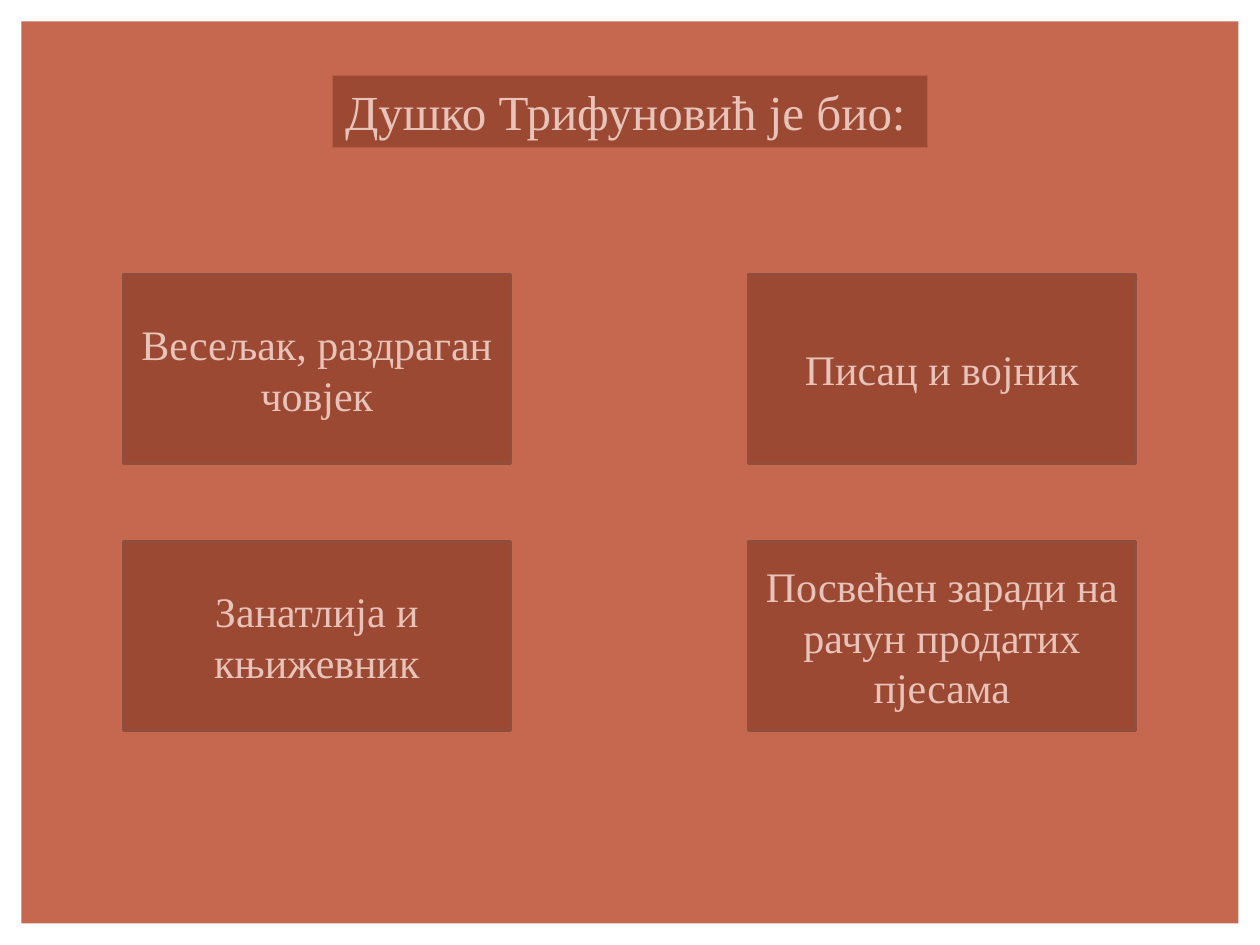
from dataclasses import dataclass

from pptx import Presentation
from pptx.dml.color import RGBColor as Color
from pptx.enum.shapes import MSO_SHAPE as Preset
from pptx.enum.text import MSO_ANCHOR as Anchor, MSO_AUTO_SIZE as AutoSize, PP_ALIGN as Align
from pptx.util import Inches, Pt


@dataclass(frozen=True)
class Theme:
    panel: str = "C5684F"
    box: str = "9C4933"
    border: str = "924E3C"
    text: str = "E8C3B9"
    font: str = "Times New Roman"
    title_size: int = 28
    body_size: int = 24


theme = Theme()

# Slide and grid, in inches
WIDTH, HEIGHT = 10, 7.5
MARGIN = 0.17
TITLE_WIDTH, TITLE_HEIGHT, TITLE_TOP = 4.72, 0.57, 0.6
CARD_WIDTH, CARD_HEIGHT = 3.07, 1.5
GRID_LEFT, GRID_TOP = 0.98, 2.18
COLUMN_STEP, ROW_STEP = 4.96, 2.12


def add_box(text, left, top, width, height, *, fill=theme.box, border=None,
            size=theme.body_size, align=Align.CENTER, anchor=Anchor.MIDDLE):
    shape = slide.shapes.add_shape(
        Preset.RECTANGLE, Inches(left), Inches(top), Inches(width), Inches(height))
    shape.shadow.inherit = False
    shape.fill.solid()
    shape.fill.fore_color.rgb = Color.from_string(fill)
    if border:
        shape.line.color.rgb = Color.from_string(border)
        shape.line.width = Pt(1.5)
    else:
        shape.line.fill.background()
    if text:
        frame = shape.text_frame
        frame.word_wrap = True
        frame.vertical_anchor = anchor
        paragraph = frame.paragraphs[0]
        paragraph.alignment = align
        run = paragraph.add_run()
        run.text = text
        run.font.name = theme.font
        run.font.size = Pt(size)
        run.font.color.rgb = Color.from_string(theme.text)
    return shape


presentation = Presentation()
presentation.slide_width = Inches(WIDTH)
presentation.slide_height = Inches(HEIGHT)
slide = presentation.slides.add_slide(presentation.slide_layouts[6])

# Background panel
add_box("", MARGIN, MARGIN, WIDTH - 2 * MARGIN, HEIGHT - 2 * MARGIN, fill=theme.panel)

# Title
title = add_box("Душко Трифуновић је био:", (WIDTH - TITLE_WIDTH) / 2, TITLE_TOP,
                TITLE_WIDTH, TITLE_HEIGHT, size=theme.title_size,
                align=Align.LEFT, anchor=Anchor.TOP)
title.text_frame.auto_size = AutoSize.SHAPE_TO_FIT_TEXT

# Cards, two by two
cards = [
    ["Весељак, раздраган човјек", "Писац и војник"],
    ["Занатлија и књижевник", "Посвећен заради на рачун продатих пјесама"],
]
for row, texts in enumerate(cards):
    for column, text in enumerate(texts):
        add_box(text, GRID_LEFT + column * COLUMN_STEP, GRID_TOP + row * ROW_STEP,
                CARD_WIDTH, CARD_HEIGHT, border=theme.border)

presentation.save("out.pptx")
